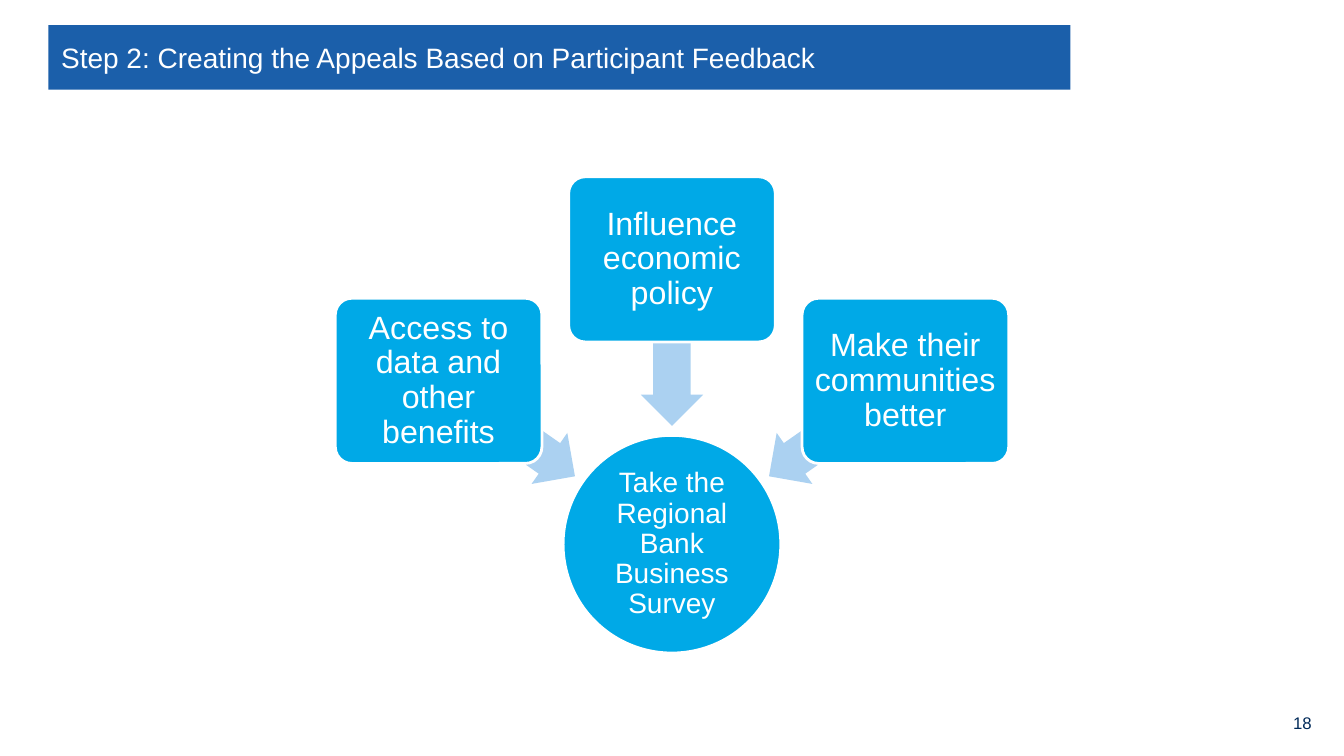
from math import cos, radians, sin

from pptx import Presentation
from pptx.dml.color import RGBColor
from pptx.enum.shapes import MSO_SHAPE
from pptx.enum.text import MSO_ANCHOR, PP_ALIGN
from pptx.util import Pt

RECT, OVAL = MSO_SHAPE.RECTANGLE, MSO_SHAPE.OVAL
ROUND, ARROW = MSO_SHAPE.ROUNDED_RECTANGLE, MSO_SHAPE.LEFT_ARROW
MIDDLE = MSO_ANCHOR.MIDDLE
LEFT, CENTER, RIGHT = PP_ALIGN.LEFT, PP_ALIGN.CENTER, PP_ALIGN.RIGHT
WHITE = RGBColor(0xFF, 0xFF, 0xFF)
NAVY = RGBColor(0x00, 0x2A, 0x59)
BLUE = RGBColor(0x1B, 0x5F, 0xAA)
SKY = RGBColor(0x00, 0xA9, 0xE7)
PALE = RGBColor(0xAB, 0xD1, 0xF1)

APPEALS = [
    (215, "Access to data and other benefits"),
    (270, "Influence economic policy"),
    (325, "Make their communities better"),
]


def write(shape, text, size, color, align, inset):
    """Put one paragraph of text into a shape."""
    frame = shape.text_frame
    frame.word_wrap = True
    frame.vertical_anchor = MIDDLE
    frame.margin_left = frame.margin_right = Pt(inset)
    frame.margin_top = frame.margin_bottom = Pt(min(inset, 3.6))
    para = frame.paragraphs[0]
    para.text = text
    para.alignment = align
    para.font.name = "Arial"
    para.font.size = Pt(size)
    para.font.color.rgb = color
    return para


def block(slide, kind, box, fill, edge=False):
    """Draw a filled shape, with a white edge if asked."""
    shape = slide.shapes.add_shape(kind, *map(Pt, box))
    shape.shadow.inherit = False
    shape.fill.solid()
    shape.fill.fore_color.rgb = fill
    if edge:
        shape.line.color.rgb = WHITE
        shape.line.width = Pt(2)
    else:
        shape.line.fill.background()
    return shape


def around(x, y, width, height):
    """Return the box of a given size centred on a point."""
    return x - width / 2, y - height / 2, width, height


def header(slide, box, text):
    """Draw the title bar."""
    write(block(slide, RECT, box, BLUE), text, 20, WHITE, LEFT, 9)


def diagram(slide, box, goal, appeals):
    """Draw a hub at the bottom of the box with appeals pointing at it."""
    left, top, width, height = box
    hub = 155.5
    x, y = left + width / 2, top + height - hub / 2
    circle = block(slide, OVAL, around(x, y, hub, hub), SKY, True)
    write(circle, goal, 20, WHITE, CENTER, 1).line_spacing = 0.9
    for angle, text in appeals:
        dx, dy = cos(radians(angle)), sin(radians(angle))
        spot = around(x + 144 * dx, y + 144 * dy, 118.8, 44.5)
        arrow = block(slide, ARROW, spot, PALE)
        arrow.rotation = angle
        arrow.adjustments[0] = 0.6
        arrow.adjustments[1] = 0.5
        spot = around(x + 203.5 * dx, y + 203.5 * dy, 147.6, 118)
        card = block(slide, ROUND, spot, SKY, True)
        card.adjustments[0] = 0.1
        write(card, text, 23, WHITE, CENTER, 3.5).line_spacing = 0.9


def footer(slide, box, number):
    """Write the page number."""
    label = slide.shapes.add_textbox(*map(Pt, box))
    write(label, number, 12, NAVY, RIGHT, 7.2)


def main():
    """Build the slide and save it."""
    deck = Presentation()
    deck.slide_width, deck.slide_height = Pt(960), Pt(540)
    slide = deck.slides.add_slide(deck.slide_layouts[6])
    header(slide, (34.6, 18, 730, 46),
           "Step 2: Creating the Appeals Based on Participant Feedback")
    diagram(slide, (240, 126, 480, 340.5),
            "Take the Regional Bank Business Survey", APPEALS)
    footer(slide, (896, 504, 48, 24), "18")
    deck.save("out.pptx")


if __name__ == "__main__":
    main()
